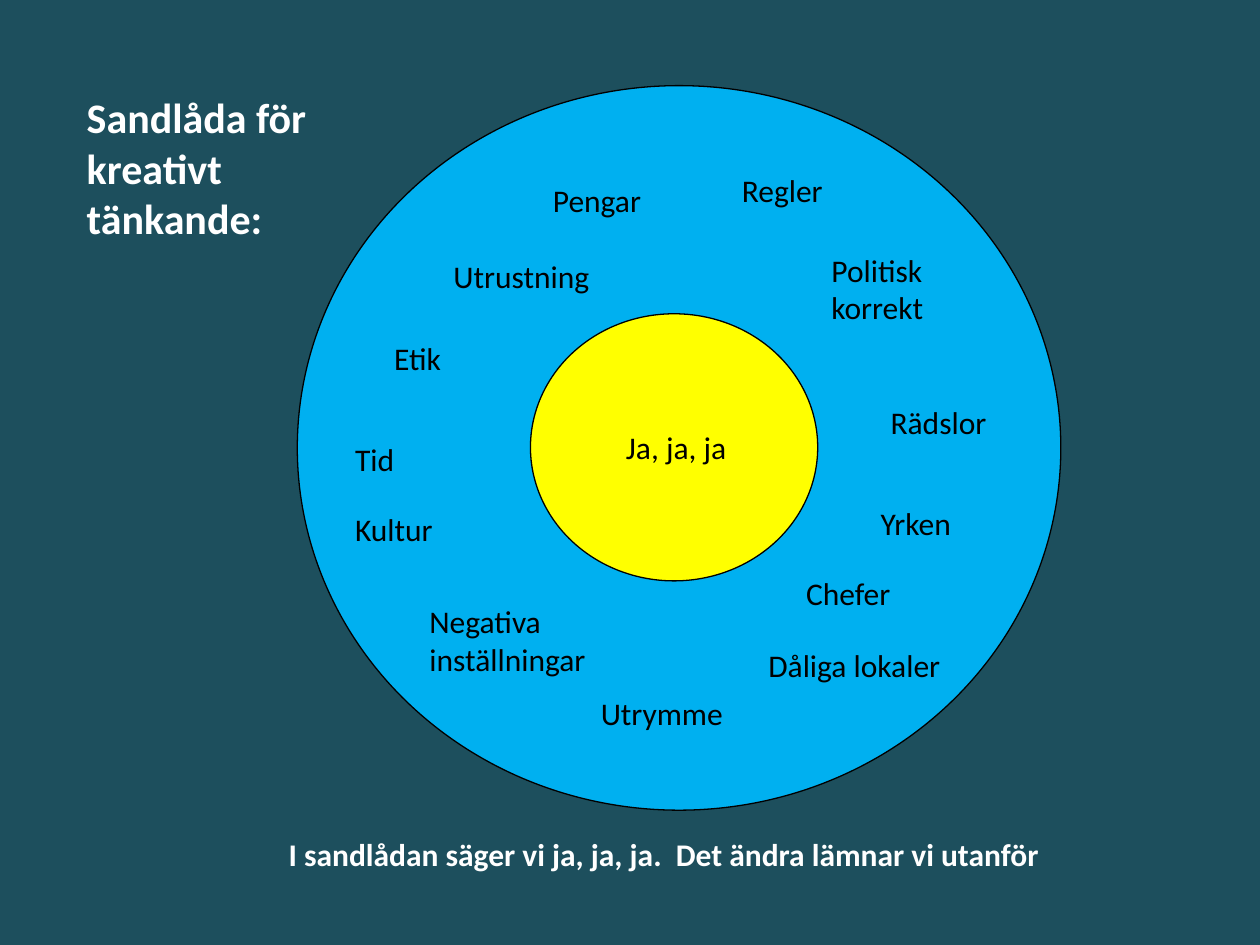
from pptx import Presentation, util as u
from pptx.dml.color import RGBColor
from pptx.enum import shapes, text

theme = dict(back="1D4F5D", ring="00B0F0", core="FFFF00", dark="000000",
             light="FFFFFF", font="Calibri", body=18, head=24, edge=0.75)

# Slide on a grid of 100 columns by 75 rows
deck = Presentation()
deck.slide_width, deck.slide_height = u.Inches(10), u.Inches(7.5)
col, row = deck.slide_width / 100, deck.slide_height / 75
slide = deck.slides.add_slide(deck.slide_layouts[6])
back = slide.background.fill
back.solid()
back.fore_color.rgb = RGBColor.from_string(theme["back"])


def place(x, y, w, h):
    return [round(n) for n in (x * col, y * row, w * col, h * row)]


def write(words, x, y, w, h=4, size="body", color="dark", bold=False,
          align=text.PP_ALIGN.LEFT):
    frame = slide.shapes.add_textbox(*place(x, y, w, h)).text_frame
    frame.word_wrap = True
    frame.auto_size = text.MSO_AUTO_SIZE.SHAPE_TO_FIT_TEXT
    para = frame.paragraphs[0]
    para.alignment = align
    run = para.add_run()
    run.text = words
    look = dict(name=theme["font"], size=u.Pt(theme[size]), bold=bold)
    for key, val in look.items():
        setattr(run.font, key, val)
    run.font.color.rgb = RGBColor.from_string(theme[color])


# Sandbox ring and its core
for tone, spot in (("ring", (23.6, 6.8, 60.6, 57.5)),
                   ("core", (42.1, 24.9, 22.8, 21.2))):
    disc = slide.shapes.add_shape(shapes.MSO_SHAPE.OVAL, *place(*spot))
    disc.shadow.inherit = False
    disc.fill.solid()
    disc.fill.fore_color.rgb = RGBColor.from_string(theme[tone])
    disc.line.color.rgb = RGBColor.from_string(theme["dark"])
    disc.line.width = u.Pt(theme["edge"])

# Core label, then the limits clockwise from the top
labels = [
    ("Ja, ja, ja", 48.7, 33.5, 11),
    ("Regler", 57.9, 13.1, 11),
    ("Politisk korrekt", 65, 19.4, 11.8, 7.1),
    ("Rädslor", 69.7, 31.5, 11),
    ("Yrken", 68.9, 39.5, 11.8),
    ("Chefer", 63, 45.1, 13.4),
    ("Dåliga lokaler", 60, 50.8, 15.7),
    ("Utrymme", 46.7, 54.6, 15.7),
    ("Negativa inställningar", 33.1, 47.3, 20.5, 7.1),
    ("Kultur", 27.2, 40, 11),
    ("Tid", 27.2, 34.4, 11.8),
    ("Etik", 30.3, 26.4, 9.4),
    ("Utrustning", 35, 19.9, 18.1),
    ("Pengar", 42.9, 13.9, 11),
]
for label in labels:
    write(*label)

# Heading and closing line
write("Sandlåda för kreativt tänkande:", 5.9, 6.8, 21.3, 13.1,
      size="head", color="light", bold=True)
write("I sandlådan säger vi ja, ja, ja.  Det ändra lämnar vi utanför",
      11.4, 65.8, 82.6, color="light", bold=True,
      align=text.PP_ALIGN.CENTER)

deck.save("out.pptx")
